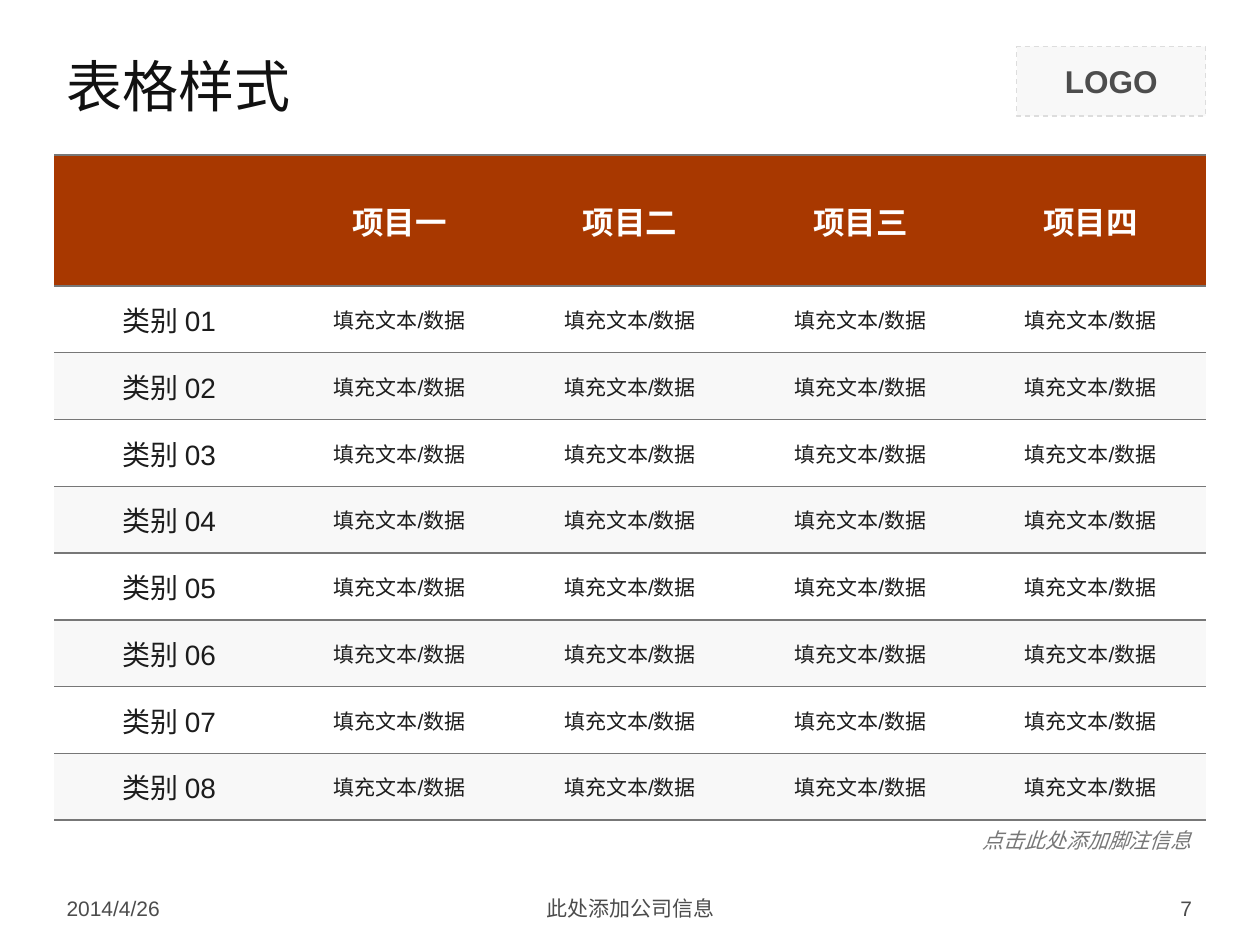
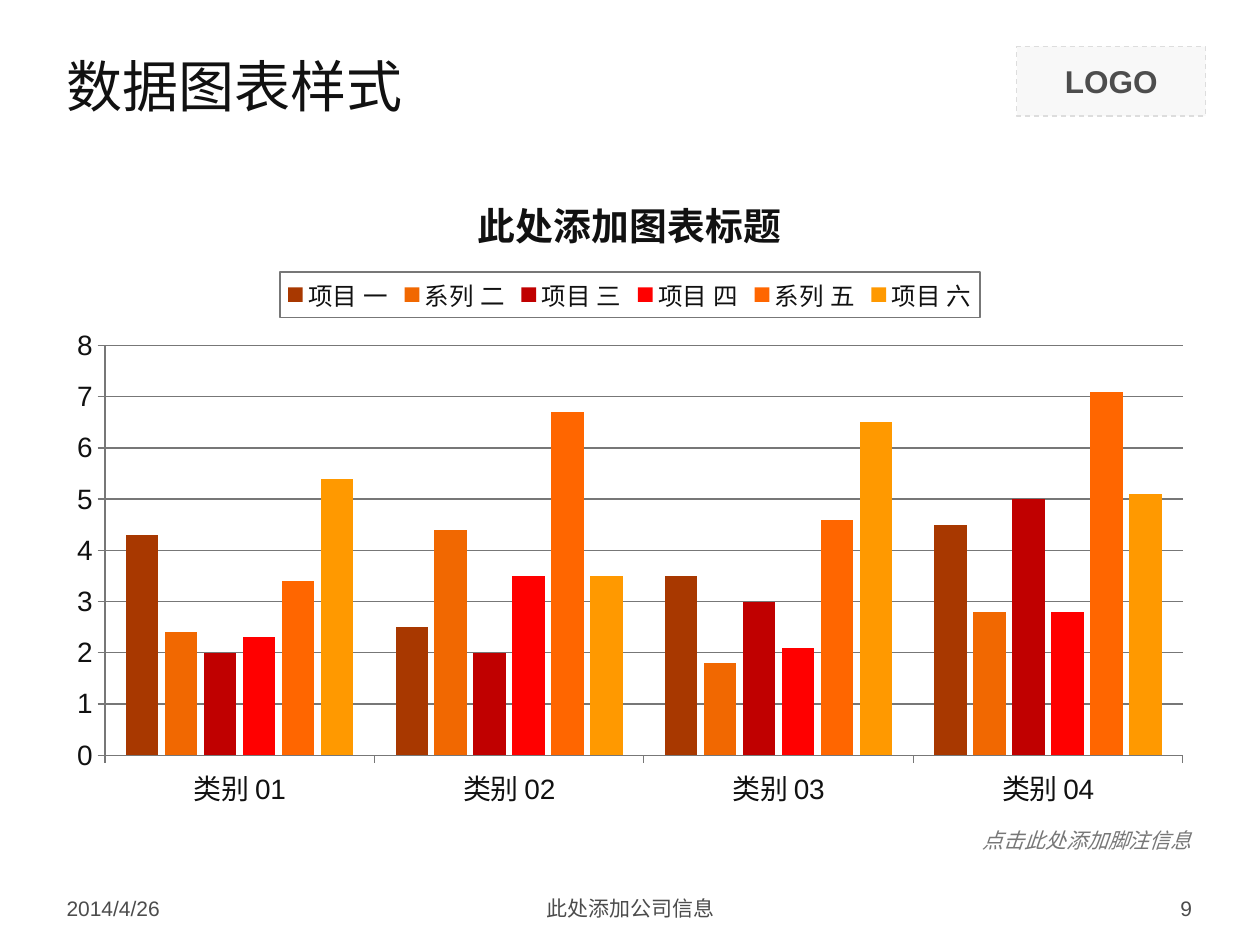
from dataclasses import dataclass
from typing import NamedTuple

from lxml import etree
from pptx import Presentation
from pptx.chart.data import CategoryChartData
from pptx.dml.color import RGBColor
from pptx.enum.chart import XL_CHART_TYPE, XL_LEGEND_POSITION, XL_TICK_MARK
from pptx.enum.dml import MSO_LINE
from pptx.enum.shapes import MSO_SHAPE
from pptx.enum.text import MSO_ANCHOR, MSO_AUTO_SIZE, PP_ALIGN
from pptx.oxml import parse_xml
from pptx.oxml.ns import nsdecls, qn
from pptx.util import Emu, Inches, Pt

LEFT, CENTER, RIGHT = PP_ALIGN.LEFT, PP_ALIGN.CENTER, PP_ALIGN.RIGHT
MIDDLE, TOP = MSO_ANCHOR.MIDDLE, MSO_ANCHOR.TOP
FIT_SHAPE, NO_FIT = MSO_AUTO_SIZE.SHAPE_TO_FIT_TEXT, MSO_AUTO_SIZE.NONE
RECTANGLE, DASH = MSO_SHAPE.RECTANGLE, MSO_LINE.DASH
CLUSTERED = XL_CHART_TYPE.COLUMN_CLUSTERED
LEGEND_TOP = XL_LEGEND_POSITION.TOP
TICK_OUT, TICK_NONE = XL_TICK_MARK.OUTSIDE, XL_TICK_MARK.NONE

SLIDE_WIDTH, SLIDE_HEIGHT = Inches(10), Inches(7.5)
GRID_COLUMNS, GRID_ROWS = 100, 75
MARGIN = 4.3
CONTENT = GRID_COLUMNS - 2 * MARGIN
TITLE_ONLY = 5


@dataclass(frozen=True)
class Theme:
    body_font: str = "Arial"
    title_font: str = "Montserrat"
    ink: str = "111111"
    cell_ink: str = "1C1C1C"
    footer_ink: str = "4C4C4C"
    logo_ink: str = "4D4D4D"
    rule: str = "777777"
    dash: str = "DDDDDD"
    paper: str = "FFFFFF"
    band: str = "F8F8F8"
    header: str = "A83800"
    title_size: float = 32
    chart_title_size: float = 21.6
    heading_size: float = 18
    label_size: float = 16
    legend_size: float = 14
    small_size: float = 12
    hairline: float = 0.75
    table_rule: float = 1


THEME = Theme()


class Area(NamedTuple):
    column: float
    row: float
    columns: float
    rows: float

    def emu(self) -> tuple[Emu, Emu, Emu, Emu]:
        across, down = SLIDE_WIDTH / GRID_COLUMNS, SLIDE_HEIGHT / GRID_ROWS
        return (Emu(round(self.column * across)), Emu(round(self.row * down)),
                Emu(round(self.columns * across)), Emu(round(self.rows * down)))


class TextStyle(NamedTuple):
    size: float
    color: str
    align: PP_ALIGN = CENTER
    bold: bool = False
    italic: bool = False
    font: str = THEME.body_font


class Caption(NamedTuple):
    area: Area
    text: str
    align: PP_ALIGN


class Series(NamedTuple):
    name: str
    values: tuple[float, ...]
    color: str


TITLE_AREA = Area(MARGIN, 2.8, CONTENT, 7.9)
LOGO_AREA = Area(80.7, 3.7, 15, 5.5)
TABLE_AREA = Area(MARGIN, 12.3, CONTENT, 52.8)
CHART_AREA = Area(MARGIN, 13.1, CONTENT, 52)
FOOTNOTE_AREA = Area(76.8, 65.2, 18.8, 3)
NUMBER_AREA = Area(72.3, 70.6, 23.3, 2.9)
HEADER_ROWS = 10.4

TITLE_STYLE = TextStyle(THEME.title_size, THEME.ink, LEFT, font=THEME.title_font)
LOGO_STYLE = TextStyle(THEME.heading_size, THEME.logo_ink, bold=True)
FOOTNOTE_STYLE = TextStyle(THEME.small_size, THEME.rule, RIGHT, italic=True)
HEADER_STYLE = TextStyle(THEME.heading_size, THEME.paper, bold=True)
CATEGORY_STYLE = TextStyle(THEME.label_size, THEME.cell_ink)
ENTRY_STYLE = TextStyle(THEME.small_size, THEME.cell_ink)
CHART_STYLE = TextStyle(THEME.heading_size, THEME.ink)
CHART_TITLE_STYLE = TextStyle(THEME.chart_title_size, THEME.ink, bold=True)
AXIS_STYLE = TextStyle(THEME.label_size, THEME.ink)
LEGEND_STYLE = TextStyle(THEME.legend_size, THEME.ink)

FOOTERS = (
    Caption(Area(MARGIN, 70.6, 23.3, 2.9), "2014/4/26", LEFT),
    Caption(Area(34.2, 70.6, 31.7, 2.9), "此处添加公司信息", CENTER),
)
ITEMS = ("项目一", "项目二", "项目三", "项目四")
CATEGORIES = [f"类别 {number:02d}" for number in range(1, 9)]
ENTRY = "填充文本/数据"
SERIES = (
    Series("项目 一", (4.3, 2.5, 3.5, 4.5), "A83800"),
    Series("系列 二", (2.4, 4.4, 1.8, 2.8), "F16801"),
    Series("项目 三", (2, 2, 3, 5), "C00000"),
    Series("项目 四", (2.3, 3.5, 2.1, 2.8), "FF0000"),
    Series("系列 五", (3.4, 6.7, 4.6, 7.1), "FF6600"),
    Series("项目 六", (5.4, 3.5, 6.5, 5.1), "FF9900"),
)


def rgb(color: str) -> RGBColor:
    return RGBColor.from_string(color)


def style_font(font, style: TextStyle) -> None:
    font.name, font.size = style.font, Pt(style.size)
    font.bold, font.italic = style.bold, style.italic
    font.color.rgb = rgb(style.color)


def write(frame, text: str, style: TextStyle) -> None:
    frame.text = text
    paragraph = frame.paragraphs[0]
    paragraph.alignment = style.align
    for run in paragraph.runs:
        style_font(run.font, style)


def style_line(line, color: str, width: float) -> None:
    line.color.rgb = rgb(color)
    line.width = Pt(width)


def add_caption(slide, area: Area, text: str, style: TextStyle, anchor: MSO_ANCHOR = MIDDLE):
    frame = slide.shapes.add_textbox(*area.emu()).text_frame
    frame.word_wrap = True
    frame.vertical_anchor = anchor
    write(frame, text, style)
    return frame


def add_logo_box(slide) -> None:
    logo_box = slide.shapes.add_shape(RECTANGLE, *LOGO_AREA.emu())
    logo_box.shadow.inherit = False
    logo_box.fill.solid()
    logo_box.fill.fore_color.rgb = rgb(THEME.band)
    style_line(logo_box.line, THEME.dash, THEME.hairline)
    logo_box.line.dash_style = DASH
    logo_box.text_frame.vertical_anchor = MIDDLE
    write(logo_box.text_frame, "LOGO", LOGO_STYLE)


def add_page(deck, title: str, number: int):
    slide = deck.slides.add_slide(deck.slide_layouts[TITLE_ONLY])
    heading = slide.shapes.title
    heading.left, heading.top, heading.width, heading.height = TITLE_AREA.emu()
    heading.text_frame.vertical_anchor = MIDDLE
    heading.text_frame.auto_size = NO_FIT
    write(heading.text_frame, title, TITLE_STYLE)
    add_logo_box(slide)
    for footer in (*FOOTERS, Caption(NUMBER_AREA, str(number), RIGHT)):
        style = TextStyle(THEME.small_size, THEME.footer_ink, footer.align)
        add_caption(slide, footer.area, footer.text, style)
    footnote = add_caption(slide, FOOTNOTE_AREA, "点击此处添加脚注信息", FOOTNOTE_STYLE, TOP)
    footnote.word_wrap = False
    footnote.auto_size = FIT_SHAPE
    return slide


def rule_cell(cell) -> None:
    properties = cell._tc.get_or_add_tcPr()
    for position, side in enumerate(("lnL", "lnR", "lnT", "lnB")):
        border = parse_xml(f'<a:{side} {nsdecls("a")} w="{Pt(THEME.table_rule)}"/>')
        if side in ("lnT", "lnB"):
            fill = etree.SubElement(border, qn("a:solidFill"))
            etree.SubElement(fill, qn("a:srgbClr"), val=THEME.rule)
        else:
            etree.SubElement(border, qn("a:noFill"))
        properties.insert(position, border)


def fill_cell(cell, text: str, style: TextStyle, background: str) -> None:
    cell.fill.solid()
    cell.fill.fore_color.rgb = rgb(background)
    cell.vertical_anchor = MIDDLE
    write(cell.text_frame, text, style)
    rule_cell(cell)


def add_category_table(slide) -> None:
    contents = [("", *ITEMS)]
    contents += [(category, *[ENTRY] * len(ITEMS)) for category in CATEGORIES]
    table = slide.shapes.add_table(len(contents), len(contents[0]), *TABLE_AREA.emu()).table
    table.horz_banding = False
    body_rows = (TABLE_AREA.rows - HEADER_ROWS) / len(CATEGORIES)
    for row, texts in enumerate(contents):
        table.rows[row].height = Area(0, 0, 0, body_rows if row else HEADER_ROWS).emu()[3]
        for column, text in enumerate(texts):
            if row == 0:
                style, background = HEADER_STYLE, THEME.header
            else:
                style = ENTRY_STYLE if column else CATEGORY_STYLE
                background = THEME.paper if row % 2 else THEME.band
            fill_cell(table.cell(row, column), text, style, background)


def style_axis(axis) -> None:
    axis.major_tick_mark, axis.minor_tick_mark = TICK_OUT, TICK_NONE
    style_font(axis.tick_labels.font, AXIS_STYLE)
    style_line(axis.format.line, THEME.rule, THEME.hairline)


def add_legend(chart) -> None:
    chart.has_legend = True
    legend = chart.legend
    legend.position = LEGEND_TOP
    legend.include_in_layout = False
    style_font(legend.font, LEGEND_STYLE)
    frame = parse_xml(
        f'<c:spPr {nsdecls("c", "a")}><a:ln w="{Pt(THEME.hairline)}"><a:solidFill>'
        f'<a:srgbClr val="{THEME.rule}"/></a:solidFill></a:ln></c:spPr>')
    legend._element.find(qn("c:txPr")).addprevious(frame)


def add_series_chart(slide) -> None:
    data = CategoryChartData()
    data.categories = CATEGORIES[:4]
    for series in SERIES:
        data.add_series(series.name, series.values)
    chart = slide.shapes.add_chart(CLUSTERED, *CHART_AREA.emu(), data).chart
    style_font(chart.font, CHART_STYLE)
    chart.has_title = True
    write(chart.chart_title.text_frame, "此处添加图表标题", CHART_TITLE_STYLE)
    chart.chart_title.include_in_layout = False
    add_legend(chart)
    style_axis(chart.category_axis)
    style_axis(chart.value_axis)
    chart.value_axis.minimum_scale, chart.value_axis.maximum_scale = 0, 8
    chart.value_axis.major_unit = 1
    style_line(chart.value_axis.major_gridlines.format.line, THEME.rule, THEME.hairline)
    plot = chart.plots[0]
    plot.vary_by_categories = False
    plot.gap_width, plot.overlap = 130, -20
    for bars, series in zip(plot.series, SERIES):
        bars.invert_if_negative = False
        bars.format.fill.solid()
        bars.format.fill.fore_color.rgb = rgb(series.color)


def main() -> None:
    deck = Presentation()
    deck.slide_width, deck.slide_height = SLIDE_WIDTH, SLIDE_HEIGHT
    add_category_table(add_page(deck, "表格样式", 7))
    add_series_chart(add_page(deck, "数据图表样式", 9))
    deck.save("out.pptx")


if __name__ == "__main__":
    main()
